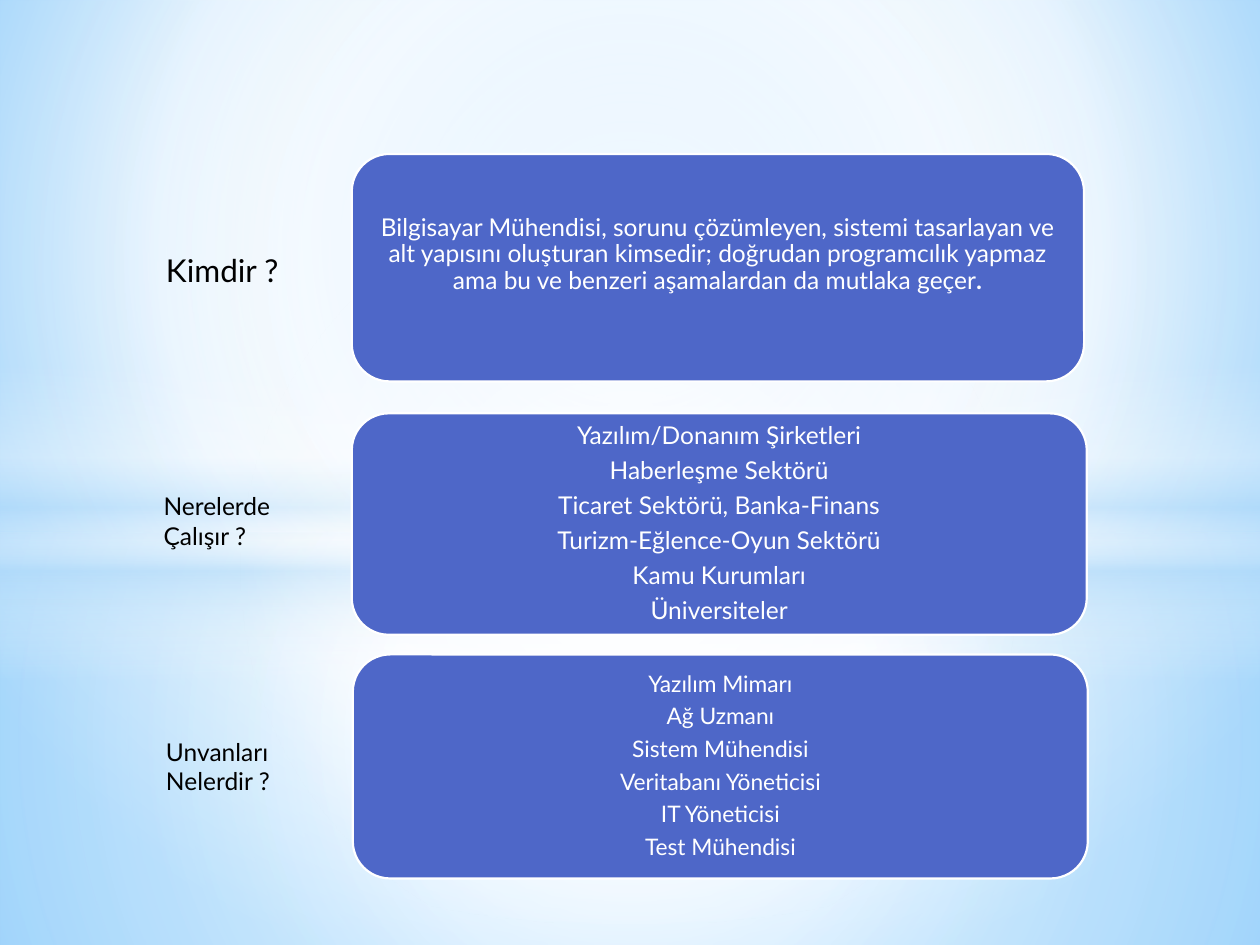
from lxml.etree import SubElement
from pptx import Presentation
from pptx.dml.color import RGBColor
from pptx.enum.shapes import MSO_SHAPE
from pptx.enum.text import MSO_ANCHOR, MSO_AUTO_SIZE, PP_ALIGN
from pptx.oxml.ns import qn
from pptx.util import Pt

FONT = "Lato"
WHITE, BLACK, BLUE, PALE = "FFFFFF", "000000", "4E67C8", "B4DCFA"


def color(value):
    return RGBColor.from_string(value)


def set_gradient(fill, element, stops, focus=None, angle=90):
    fill.gradient()
    grad = next(element.iter(qn("a:gradFill")))
    for child in list(grad):
        grad.remove(child)
    stop_list = SubElement(grad, qn("a:gsLst"))
    for position, value, alpha in stops:
        stop = SubElement(stop_list, qn("a:gs"), pos=str(position * 1000))
        clr = SubElement(stop, qn("a:srgbClr"), val=value)
        if alpha < 100:
            SubElement(clr, qn("a:alpha"), val=str(alpha * 1000))
    if focus:
        path = SubElement(grad, qn("a:path"), path="circle")
        sides = {side: str(v * 1000) for side, v in zip("ltrb", focus)}
        SubElement(path, qn("a:fillToRect"), **sides)
    else:
        SubElement(grad, qn("a:lin"), ang=str(angle * 60000), scaled="0")


def add_shape(s, kind, box):
    sp = s.shapes.add_shape(kind, *map(Pt, box))
    sp.shadow.inherit = False
    return sp


def add_run(p, text, size, value, bold=False):
    r = p.add_run()
    r.text = text
    r.font.name = FONT
    r.font.size = Pt(size)
    r.font.color.rgb = color(value)
    if bold:
        r.font.bold = r.font.italic = True


def add_backdrop(s, box):
    x, y, w, h = box
    center = (50, 50, 50, 50)
    set_gradient(s.background.fill, s.element,
                 [(0, "9ED5FF", 100), (60, WHITE, 100), (100, "5BB9FF", 100)],
                 (20, 10, 20, 60))
    horizon = 304.5
    layers = [
        (MSO_SHAPE.RECTANGLE, horizon, h - horizon,
         [(0, WHITE, 91), (37, WHITE, 76), (100, PALE, 79)], center),
        (MSO_SHAPE.RECTANGLE, 0, horizon,
         [(0, WHITE, 89), (48, WHITE, 62), (100, PALE, 79)], center),
        (MSO_SHAPE.RECTANGLE, 209, 180,
         [(0, WHITE, 0), (29, WHITE, 30), (45, PALE, 40),
          (55, WHITE, 26), (65, PALE, 60), (100, WHITE, 0)], None),
        (MSO_SHAPE.OVAL, 126, 402, [(0, WHITE, 100), (54, WHITE, 0)], center),
    ]
    for kind, top, height, stops, focus in layers:
        sp = add_shape(s, kind, (x, y + top, w, height))
        set_gradient(sp.fill, sp.element, stops, focus)
        sp.line.fill.background()


def add_answer(s, box, paragraphs, size, bottom=2.2):
    sp = add_shape(s, MSO_SHAPE.ROUNDED_RECTANGLE, box)
    sp.fill.solid()
    sp.fill.fore_color.rgb = color(BLUE)
    sp.line.color.rgb = color(WHITE)
    sp.line.width = Pt(1.25)
    tf = sp.text_frame
    tf.word_wrap = True
    tf.vertical_anchor = MSO_ANCHOR.MIDDLE
    tf.margin_left = tf.margin_right = Pt(4.2)
    tf.margin_top, tf.margin_bottom = Pt(2.2), Pt(bottom)
    for i, runs in enumerate(paragraphs):
        p = tf.add_paragraph() if i else tf.paragraphs[0]
        p.alignment = PP_ALIGN.CENTER
        p.line_spacing = 0.9
        p.space_after = Pt(size * 0.35)
        for j, text in enumerate(runs):
            add_run(p, text, size, WHITE, bold=j > 0)


def add_question(s, box, text, size):
    tf = s.shapes.add_textbox(*map(Pt, box)).text_frame
    tf.word_wrap = True
    tf.auto_size = MSO_AUTO_SIZE.SHAPE_TO_FIT_TEXT
    add_run(tf.paragraphs[0], text, size, BLACK)


def main():
    prs = Presentation()
    prs.slide_width, prs.slide_height = Pt(720), Pt(540)
    s = prs.slides.add_slide(prs.slide_layouts[6])
    add_backdrop(s, (0, 0, 720, 540))

    definition = [(
        "Bilgisayar Mühendisi, sorunu çözümleyen, sistemi tasarlayan ve alt "
        "yapısını oluşturan kimsedir; doğrudan programcılık yapmaz ama bu ve "
        "benzeri aşamalardan da mutlaka geçer", ".")]
    workplaces = [(t,) for t in (
        "Yazılım/Donanım Şirketleri", "Haberleşme Sektörü",
        "Ticaret Sektörü, Banka-Finans", "Turizm-Eğlence-Oyun Sektörü",
        "Kamu Kurumları", "Üniversiteler")]
    titles = [(t,) for t in (
        "Yazılım Mimarı", "Ağ Uzmanı", "Sistem Mühendisi",
        "Veritabanı Yöneticisi", "IT Yöneticisi", "Test Mühendisi")]

    add_answer(s, (201, 88, 418.5, 130), definition, 14, bottom=17)
    add_answer(s, (201, 236.2, 420, 126.5), workplaces, 14)
    add_answer(s, (201.6, 374, 420, 128), titles, 13)

    add_question(s, (87.8, 139.7, 90.7, 29), "Kimdir ?", 18)
    add_question(s, (86.4, 277.2, 113, 41), "Nerelerde Çalışır ?", 14)
    add_question(s, (87.8, 417.6, 113, 41), "Unvanları Nelerdir ?", 14)

    prs.save("out.pptx")


if __name__ == "__main__":
    main()
